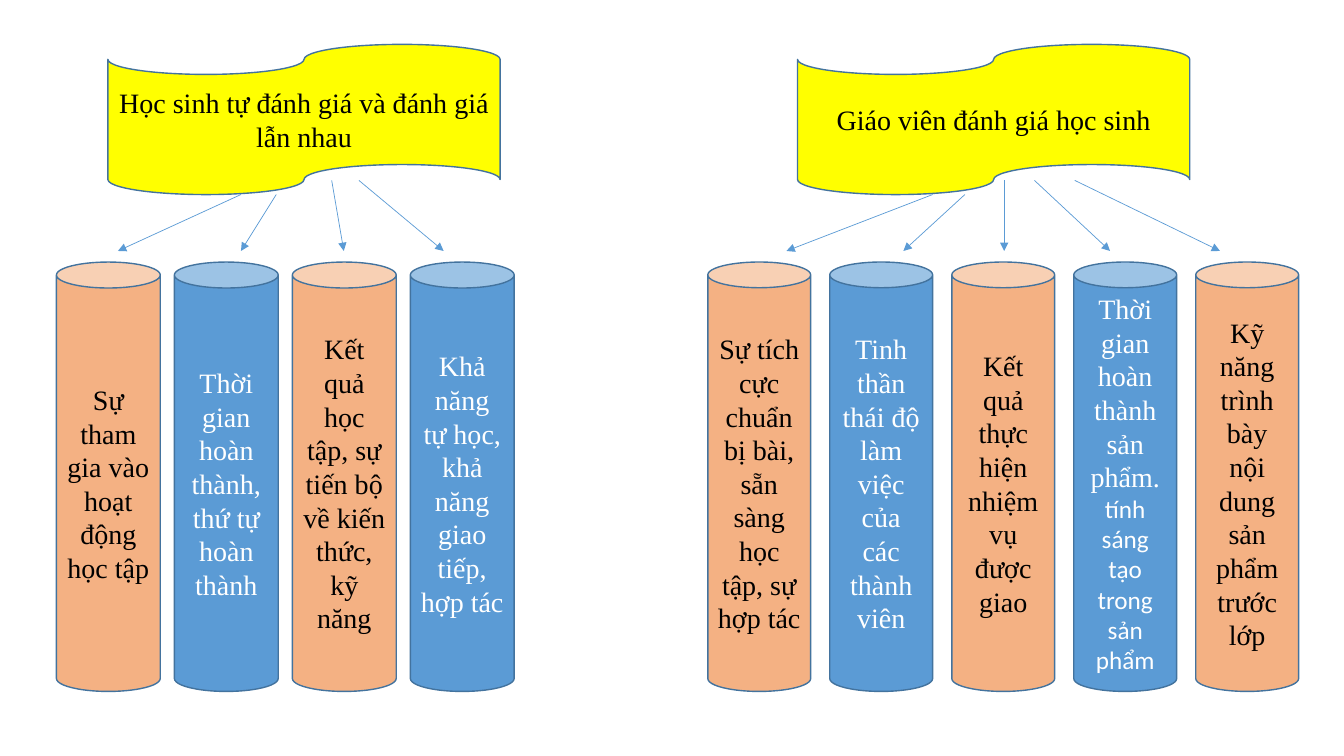
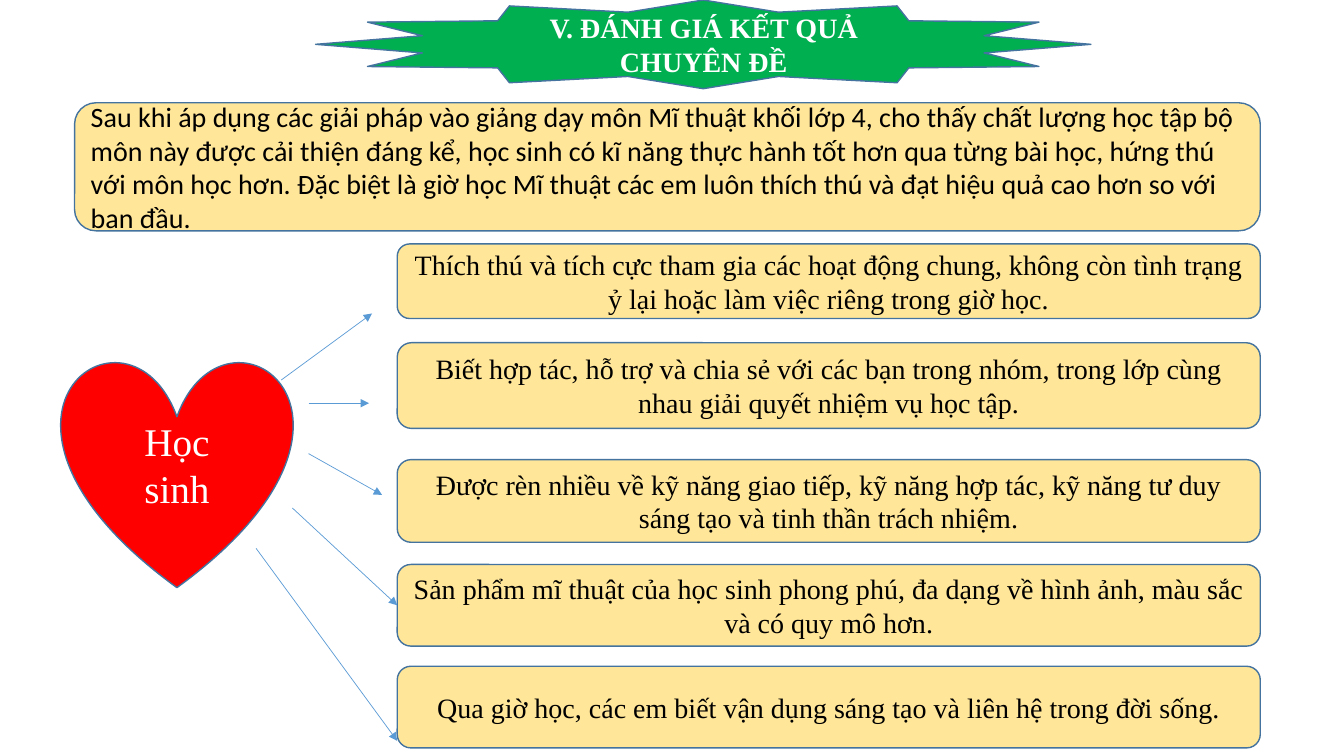
"""Builds two slides on how pupils are assessed and what the topic achieved."""
from lxml import etree
from pptx import Presentation
from pptx.dml.color import RGBColor
from pptx.enum.shapes import MSO_CONNECTOR, MSO_SHAPE
from pptx.enum.text import MSO_ANCHOR, MSO_AUTO_SIZE, PP_ALIGN
from pptx.oxml.ns import qn
from pptx.util import Inches, Pt

CAN, TAPE = MSO_SHAPE.CAN, MSO_SHAPE.FLOWCHART_PUNCHED_TAPE
BOX = MSO_SHAPE.FLOWCHART_ALTERNATE_PROCESS
HEART, STAR = MSO_SHAPE.HEART, MSO_SHAPE.STAR_12_POINT
STRAIGHT, MIDDLE = MSO_CONNECTOR.STRAIGHT, MSO_ANCHOR.MIDDLE
LEFT, CENTER = PP_ALIGN.LEFT, PP_ALIGN.CENTER
NO_AUTOFIT = MSO_AUTO_SIZE.NONE
LEFT_SIDE = 1

SERIF, SANS = "Times New Roman", "Calibri"
BLACK, WHITE, OUTLINE = "000000", "FFFFFF", "43739E"
ORANGE, BLUE, YELLOW = "F4B183", "5B9BD5", "FFFF00"
CREAM, RED, GREEN = "FFE699", "FF0000", "00B050"

GROUPS = [
    {
        "heading": "Học sinh tự đánh giá và đánh giá lẫn nhau",
        "heading_left": 1.07,
        "left": 0.56, "pitch": 1.17, "width": 1.03,
        "criteria": [
            ["Sự tham gia vào hoạt động học tập"],
            ["Thời gian hoàn thành, thứ tự hoàn thành"],
            ["Kết quả học tập, sự tiến bộ về kiến thức, kỹ năng"],
            ["Khả năng tự học, khả năng giao tiếp, hợp tác"],
        ],
        "arrows": [(2.39, 1.93, 1.17), (2.74, 1.93, 2.39),
                   (3.29, 1.79, 3.41), (3.56, 1.79, 4.4)],
    },
    {
        "heading": "Giáo viên đánh giá học sinh",
        "heading_left": 7.91,
        "left": 7.02, "pitch": 1.21, "width": 1.02,
        "criteria": [
            ["Sự tích cực chuẩn bị bài, sẵn sàng học tập, sự hợp tác"],
            ["Tinh thần thái độ làm việc của các thành viên"],
            ["Kết quả thực hiện nhiệm vụ được giao"],
            ["Thời gian hoàn thành sản phẩm. ", "tính sáng tạo trong sản phẩm"],
            ["Kỹ năng trình bày nội dung sản phẩm trước lớp"],
        ],
        "arrows": [(9.25, 1.93, 7.8), (9.57, 1.93, 8.96), (9.96, 1.79, 9.96),
                   (10.26, 1.79, 11.01), (10.66, 1.79, 12.1)],
    },
]
CAN_TOP, CAN_HEIGHT, ARROW_END = 2.6, 4.26, 2.49

TITLE = "V. ĐÁNH GIÁ KẾT QUẢ CHUYÊN ĐỀ"
SUMMARY = (
    "Sau khi áp dụng các giải pháp vào giảng dạy môn Mĩ thuật khối lớp 4, "
    "cho thấy chất lượng học tập bộ môn này được cải thiện đáng kể, học sinh "
    "có kĩ năng thực hành tốt hơn qua từng bài học, hứng thú với môn học hơn. "
    "Đặc biệt là giờ học Mĩ thuật các em luôn thích thú và đạt hiệu quả cao "
    "hơn so với ban đầu."
)
RESULTS = [
    (2.42, 0.74, "Thích thú và tích cực tham gia các hoạt động chung, không còn "
                 "tình trạng ỷ lại hoặc làm việc riêng trong giờ học."),
    (3.4, 0.85, "Biết hợp tác, hỗ trợ và chia sẻ với các bạn trong nhóm, trong "
                "lớp cùng nhau giải quyết nhiệm vụ học tập."),
    (4.56, 0.82, "Được rèn nhiều về kỹ năng giao tiếp, kỹ năng hợp tác, kỹ năng "
                 "tư duy sáng tạo và tinh thần trách nhiệm."),
    (5.6, 0.81, "Sản phẩm mĩ thuật của học sinh phong phú, đa dạng về hình ảnh, "
                "màu sắc và có quy mô hơn."),
    (6.61, 0.81, "Qua giờ học, các em biết vận dụng sáng tạo và liên hệ trong "
                 "đời sống."),
]
RESULT_ARROWS = [(2.79, 3.77, 3.69, 3.11), (3.06, 4, 3.66, 4),
                 (3.06, 4.5, 3.79, 4.91), (2.9, 5.04, 3.94, 6),
                 (2.54, 5.44, 3.94, 7.35)]
JOINED_RESULT = 3


def rgb(value):
    return RGBColor.from_string(value)


def style_run(r, size, color, font=SERIF, bold=False):
    r.font.name, r.font.size, r.font.bold = font, Pt(size), bold
    r.font.color.rgb = rgb(color)


def add_block(s, kind, at, fill, text="", color=BLACK, size=20, font=SERIF,
              align=CENTER):
    sp = s.shapes.add_shape(kind, *map(Inches, at))
    sp.shadow.inherit = False
    sp.fill.solid()
    sp.fill.fore_color.rgb = rgb(fill)
    sp.line.color.rgb = rgb(OUTLINE)
    sp.line.width = Pt(1)
    tf = sp.text_frame
    tf.word_wrap, tf.vertical_anchor = True, MIDDLE
    tf.text = text
    p = tf.paragraphs[0]
    p.alignment = align
    for r in p.runs:
        style_run(r, size, color, font)
    return sp


def add_arrow(s, x1, y1, x2, y2):
    line = s.shapes.add_connector(STRAIGHT, *map(Inches, (x1, y1, x2, y2)))
    line.line.color.rgb = rgb(BLUE)
    line.line.width = Pt(0.5)
    etree.SubElement(line.line._get_or_add_ln(), qn("a:tailEnd"), type="triangle")
    etree.SubElement(line._element.spPr, qn("a:effectLst"))
    return line


def add_group(s, group):
    for i, (text, *extra) in enumerate(group["criteria"]):
        fill, color = ((ORANGE, BLACK), (BLUE, WHITE))[i % 2]
        left = group["left"] + i * group["pitch"]
        can = add_block(s, CAN, (left, CAN_TOP, group["width"], CAN_HEIGHT),
                        fill, text, color)
        for part in extra:
            r = can.text_frame.paragraphs[0].add_run()
            r.text = part
            style_run(r, 18, color, SANS)
    add_block(s, TAPE, (group["heading_left"], 0.44, 3.89, 1.49), YELLOW,
              group["heading"])
    for x1, y1, x2 in group["arrows"]:
        add_arrow(s, x1, y1, x2, ARROW_END)


def add_title(s):
    star = add_block(s, STAR, (3.13, 0, 7.69, 0.88), GREEN)
    title = s.shapes.title
    title._element.addprevious(star._element)
    title.left, title.top, title.width, title.height = map(
        Inches, (4.73, 0, 4.5, 0.88))
    tf = title.text_frame
    tf.text = TITLE
    tf.word_wrap, tf.vertical_anchor = True, MIDDLE
    tf.auto_size = NO_AUTOFIT
    p = tf.paragraphs[0]
    p.alignment, p.line_spacing = CENTER, 1.0
    style_run(p.runs[0], 20, WHITE, bold=True)


def build_criteria(prs):
    s = prs.slides.add_slide(prs.slide_layouts[6])
    for group in GROUPS:
        add_group(s, group)


def build_results(prs):
    s = prs.slides.add_slide(prs.slide_layouts[5])
    add_title(s)
    add_block(s, BOX, (0.74, 1.02, 11.76, 1.27), CREAM, SUMMARY,
              font=SANS, align=LEFT)
    boxes = [add_block(s, BOX, (3.94, top, 8.56, height), CREAM, text)
             for top, height, text in RESULTS]
    add_block(s, HEART, (0.61, 3.57, 2.29, 2.26), RED, "Học sinh", WHITE, 28)
    arrows = [add_arrow(s, *ends) for ends in RESULT_ARROWS]
    arrows[JOINED_RESULT].end_connect(boxes[JOINED_RESULT], LEFT_SIDE)


def main():
    prs = Presentation()
    prs.slide_width, prs.slide_height = Inches(13.33), Inches(7.5)
    build_criteria(prs)
    build_results(prs)
    prs.save("out.pptx")


if __name__ == "__main__":
    main()
